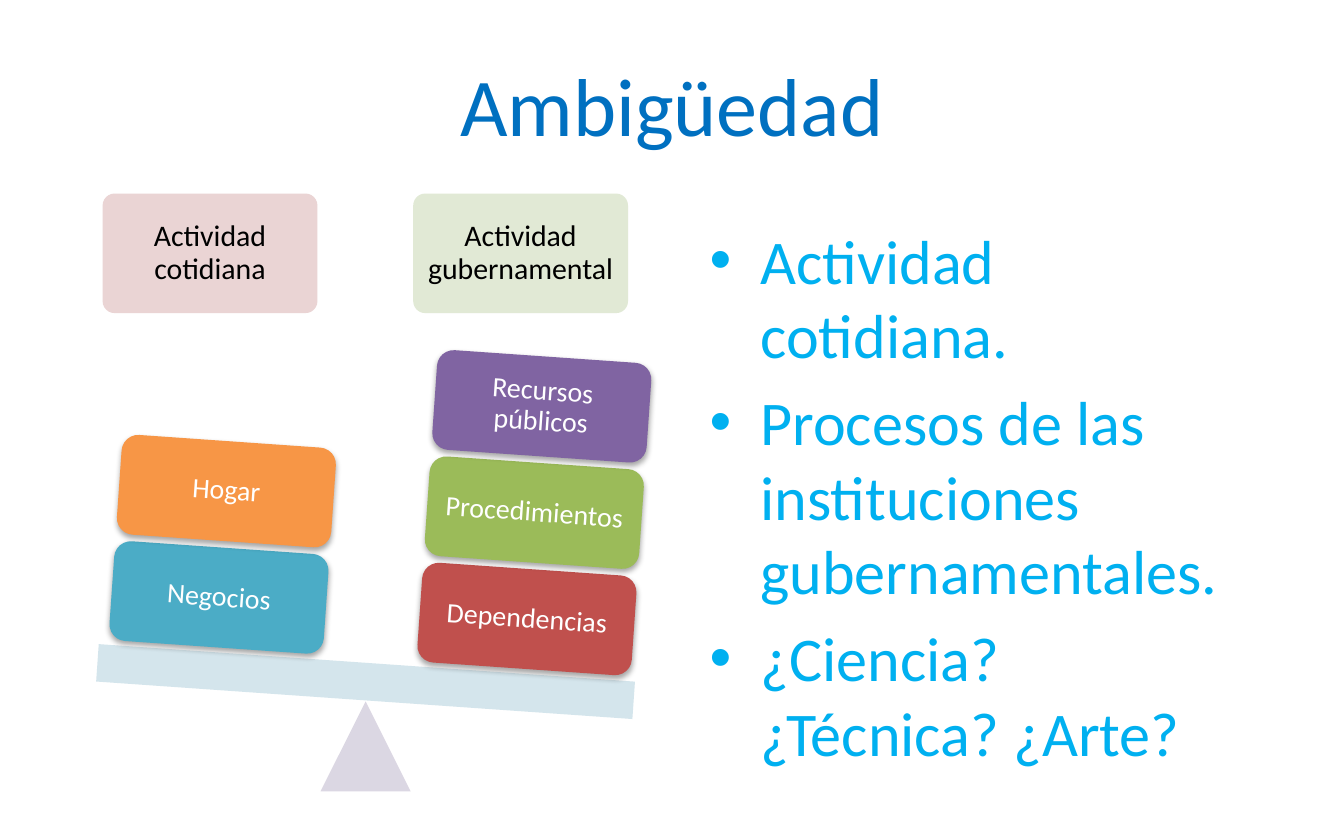
from dataclasses import dataclass
from math import radians, tan

from lxml import etree
from pptx import Presentation
from pptx.dml.color import RGBColor
from pptx.enum.shapes import MSO_SHAPE as Preset
from pptx.enum.text import MSO_ANCHOR as Anchor, PP_ALIGN as Align
from pptx.oxml.ns import qn
from pptx.util import Cm, Pt


@dataclass(frozen=True)
class Theme:
    font: str = "Calibri"
    title: str = "0070C0"
    body: str = "00B0F0"
    dark: str = "000000"
    light: str = "FFFFFF"
    beam: str = "D0E3EA"
    pivot: str = "D8D3E0"
    title_size: float = 44
    body_size: float = 33.3
    header_size: float = 16
    block_size: float = 15


THEME = Theme()
TILT = 4  # degrees the balance leans to the right

# Header, header colour, blocks from the bottom up
COLUMNS = [
    ("Actividad cotidiana", "E8D0D0",
     [("Negocios", "4BACC6"), ("Hogar", "F79646")]),
    ("Actividad gubernamental", "DEE7D1",
     [("Dependencias", "C0504D"), ("Procedimientos", "9BBB59"),
      ("Recursos públicos", "8064A2")]),
]
POINTS = [
    "Actividad cotidiana.",
    "Procesos de las instituciones gubernamentales.",
    "¿Ciencia? ¿Técnica? ¿Arte?",
]


def add_run(paragraph, text, size, color):
    run = paragraph.add_run()
    run.text = text
    run.font.name = THEME.font
    run.font.size = Pt(size)
    run.font.color.rgb = RGBColor.from_string(color)


def add_filled(shapes, preset, box, color, opacity=100, rotation=0):
    shape = shapes.add_shape(preset, *(Cm(length) for length in box))
    shape.shadow.inherit = False
    shape.rotation = rotation
    shape.line.fill.background()
    shape.fill.solid()
    shape.fill.fore_color.rgb = RGBColor.from_string(color)
    if opacity < 100:
        fill_color = shape.fill._xPr.find(qn("a:solidFill"))[0]
        etree.SubElement(fill_color, qn("a:alpha"), val=str(opacity * 1000))
    return shape


def add_label(shape, text, size, color):
    frame = shape.text_frame
    frame.word_wrap = True
    frame.vertical_anchor = Anchor.MIDDLE
    # The rounded corners already hold the text in from the edge
    frame.margin_left = frame.margin_right = Cm(0.12)
    frame.margin_top = frame.margin_bottom = Cm(0.12)
    paragraph = frame.paragraphs[0]
    paragraph.alignment = Align.CENTER
    paragraph.line_spacing = 0.9
    add_run(paragraph, text, size, color)


def add_drop_shadow(shape):
    effects = shape._element.spPr.find(qn("a:effectLst"))
    shadow = etree.SubElement(
        effects, qn("a:outerShdw"), blurRad=str(Pt(3.1)), dist=str(Pt(1.8)),
        dir=str(90 * 60000), rotWithShape="0")
    color = etree.SubElement(shadow, qn("a:srgbClr"), val=THEME.dark)
    etree.SubElement(color, qn("a:alpha"), val="35000")


def add_title(slide, box, text):
    frame = slide.shapes.add_textbox(*(Cm(length) for length in box)).text_frame
    frame.word_wrap = True
    frame.vertical_anchor = Anchor.MIDDLE
    frame.paragraphs[0].alignment = Align.CENTER
    add_run(frame.paragraphs[0], text, THEME.title_size, THEME.title)


def add_balance(slide, left, top):
    shapes = slide.shapes.add_group_shape().shapes
    slope = tan(radians(TILT))
    width, header_height, block_height = 4.06, 2.26, 1.89
    header_pitch, stack_pitch, block_pitch = 5.87, 5.82, 2.01

    # Headers
    for index, (header, color, _) in enumerate(COLUMNS):
        box = (left + 0.11 + index * header_pitch, top, width, header_height)
        shape = add_filled(shapes, Preset.ROUNDED_RECTANGLE, box, color, 90)
        shape.adjustments[0] = 0.1
        add_label(shape, header, THEME.header_size, THEME.dark)

    # Pivot and beam
    add_filled(shapes, Preset.ISOSCELES_TRIANGLE,
               (left + 4.23, top + 9.6, 1.7, 1.7), THEME.pivot, 90)
    add_filled(shapes, Preset.RECTANGLE,
               (left, top + 8.87, 10.16, 0.71), THEME.beam, 90, TILT)

    # Blocks stacked at right angles to the beam
    for index, (_, _, blocks) in enumerate(COLUMNS):
        for level, (text, color) in enumerate(blocks):
            across, up = index * stack_pitch, level * block_pitch
            box = (left + 0.28 + across + up * slope,
                   top + 6.69 + across * slope - up, width, block_height)
            shape = add_filled(shapes, Preset.ROUNDED_RECTANGLE, box, color,
                               rotation=TILT)
            add_drop_shadow(shape)
            add_label(shape, text, THEME.block_size, THEME.light)


def add_points(slide, box, points):
    frame = slide.shapes.add_textbox(*(Cm(length) for length in box)).text_frame
    frame.word_wrap = True
    for index, text in enumerate(points):
        paragraph = frame.add_paragraph() if index else frame.paragraphs[0]
        properties = paragraph._p.get_or_add_pPr()
        properties.set("marL", str(Cm(0.96)))
        properties.set("indent", str(-Cm(0.96)))
        etree.SubElement(properties, qn("a:buFont"), typeface="Arial")
        etree.SubElement(properties, qn("a:buChar"), char="•")
        if index:
            paragraph.space_before = Pt(6.6)
        add_run(paragraph, text, THEME.body_size, THEME.body)


def main():
    presentation = Presentation()
    presentation.slide_width = Cm(25.4)
    presentation.slide_height = Cm(15.88)
    slide = presentation.slides.add_slide(presentation.slide_layouts[6])
    add_title(slide, (1.27, 0.64, 22.86, 2.64), "Ambigüedad")
    add_balance(slide, 1.83, 3.66)
    add_points(slide, (13.16, 4.07, 10.77, 9.98), POINTS)
    presentation.save("out.pptx")


if __name__ == "__main__":
    main()
